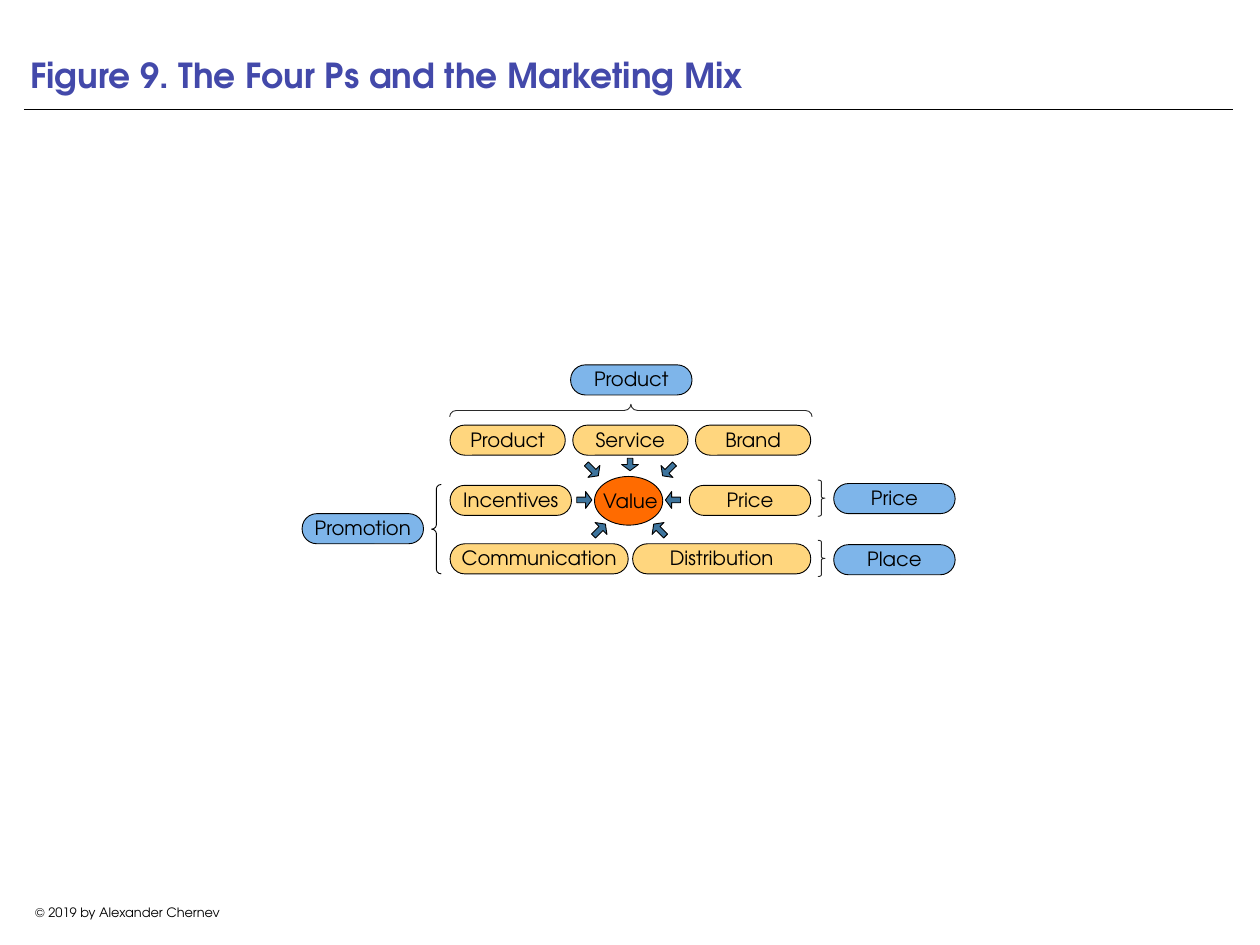
from pptx import Presentation
from pptx.dml.color import RGBColor
from pptx.enum.shapes import MSO_CONNECTOR, MSO_SHAPE as Shape
from pptx.enum.text import MSO_ANCHOR as Anchor, PP_ALIGN as Align
from pptx.oxml.ns import qn
from pptx.util import Inches, Pt
from lxml import etree

FONT = "TeX Gyre Adventor"
BLACK = RGBColor(0x00, 0x00, 0x00)
GREY = RGBColor(0x2A, 0x2A, 0x2A)
TITLE_BLUE = RGBColor(0x43, 0x49, 0xAA)
BLUE = RGBColor(0x7E, 0xB5, 0xEA)
YELLOW = RGBColor(0xFF, 0xD6, 0x7E)
ORANGE = RGBColor(0xFF, 0x6B, 0x00)
ARROW_BLUE = RGBColor(0x3D, 0x74, 0x9D)

PILL_WIDTH, PILL_HEIGHT = 1.37, 0.34


def write(box, text, size, color=BLACK, align=Align.CENTER,
          anchor=Anchor.MIDDLE, inset=0, spacing=None, bold=False, wrap=True):
    frame = box.text_frame
    frame.text = text
    frame.word_wrap = wrap
    frame.vertical_anchor = anchor
    frame.margin_left = frame.margin_right = Inches(inset)
    frame.margin_top = frame.margin_bottom = Inches(inset)
    para = frame.paragraphs[0]
    para.alignment = align
    if spacing:
        para.line_spacing = spacing
    font = para.runs[0].font
    font.name, font.size, font.bold = FONT, Pt(size), bold
    font.color.rgb = color


def add_text(page, left, top, width, height, text, size, **style):
    box = page.shapes.add_textbox(
        Inches(left), Inches(top), Inches(width), Inches(height))
    write(box, text, size, **style)


def add_figure(page, kind, left, top, width, height, fill=None, line=BLACK,
               adjustments=(), rotation=0):
    figure = page.shapes.add_shape(
        kind, Inches(left), Inches(top), Inches(width), Inches(height))
    figure.shadow.inherit = False
    if fill is None:
        figure.fill.background()
    else:
        figure.fill.solid()
        figure.fill.fore_color.rgb = fill
    figure.line.color.rgb = line
    figure.line.width = Pt(0.75)
    for index, value in enumerate(adjustments):
        figure.adjustments[index] = value
    figure.rotation = rotation
    return figure


def add_pill(page, left, top, text, fill, width=PILL_WIDTH):
    pill = add_figure(page, Shape.ROUNDED_RECTANGLE, left, top, width,
                      PILL_HEIGHT, fill, adjustments=[0.49])
    write(pill, text, 16, anchor=Anchor.BOTTOM, spacing=0.8)


def add_header(page, left, top, width, height):
    add_text(page, left, top, width, height,
             "Figure 9. The Four Ps and the Marketing Mix", 28,
             color=TITLE_BLUE, align=Align.LEFT, anchor=Anchor.BOTTOM,
             inset=0.07, bold=True)
    # Rule below the title
    rule_top = Inches(top + height + 0.09)
    rule = page.shapes.add_connector(
        MSO_CONNECTOR.STRAIGHT, Inches(left), rule_top,
        Inches(left + width), rule_top)
    rule.line.color.rgb = BLACK
    rule.line.width = Pt(0.5)
    etree.SubElement(rule._element.spPr, qn("a:effectLst"))


def add_four_ps(page, left, top):
    """Outer ring: the four Ps with the braces that tie them to the mix."""
    for text, x, y in [("Product", 3.03, 0), ("Promotion", 0, 1.68),
                       ("Price", 6, 1.34), ("Place", 6, 2.03)]:
        add_pill(page, left + x, top + y, text, BLUE)

    # Braces
    for y in (1.3, 1.98):
        add_figure(page, Shape.RIGHT_BRACE, left + 5.82, top + y, 0.08, 0.41,
                   line=GREY, adjustments=[0.22, 0.5])
    add_figure(page, Shape.LEFT_BRACE, left + 3.64, top - 1.53, 0.14, 4.09,
               line=GREY, adjustments=[0.54, 0.5], rotation=90)
    add_figure(page, Shape.LEFT_BRACE, left + 1.46, top + 1.35, 0.11, 1.01,
               adjustments=[0.45, 0.5])


def add_marketing_mix(page, left, top, width):
    """Inner block: seven tactics in three rows around the value."""
    # Value
    add_figure(page, Shape.OVAL, left + 1.63, top + 0.58, 0.77, 0.55, ORANGE)
    add_text(page, left + 1.7, top + 0.73, 0.67, 0.31, "Value", 16,
             spacing=0.7)

    # Tactics, spread evenly from the left edge to the right edge
    rows = [(0, 1.3, ["Product", "Service", "Brand"]),
            (0.68, PILL_WIDTH, ["Incentives", "Price"]),
            (1.34, 2.01, ["Communication", "Distribution"])]
    for y, pill_width, names in rows:
        pitch = (width - pill_width) / (len(names) - 1)
        for index, name in enumerate(names):
            add_pill(page, left + index * pitch, top + y, name, YELLOW,
                     pill_width)

    # Arrows pointing at the value: rotation, left, top, length
    arrows = [(0, 1.43, 0.75, 0.17), (180, 2.43, 0.75, 0.17),
              (315, 1.59, 1.09, 0.19), (225, 2.27, 1.09, 0.19),
              (90, 1.96, 0.35, 0.14), (135, 2.37, 0.41, 0.19),
              (45, 1.51, 0.41, 0.19)]
    for rotation, x, y, length in arrows:
        add_figure(page, Shape.RIGHT_ARROW, left + x, top + y, length, 0.19,
                   ARROW_BLUE, adjustments=[0.33, 0.07 / length],
                   rotation=rotation)


def add_footer(page, left, top, width, height):
    add_text(page, left, top, width, height, "© 2019 by Alexander Chernev",
             10.5, wrap=False)


def main():
    deck = Presentation()
    deck.slide_width, deck.slide_height = Inches(14.22), Inches(10.67)
    page = deck.slides.add_slide(deck.slide_layouts[6])
    add_header(page, 0.27, 0, 13.64, 1.15)
    add_four_ps(page, 3.41, 4.12)
    add_marketing_mix(page, 5.08, 4.8, 4.07)
    add_footer(page, 0.27, 10.16, 2.34, 0.28)
    deck.save("out.pptx")


if __name__ == "__main__":
    main()
